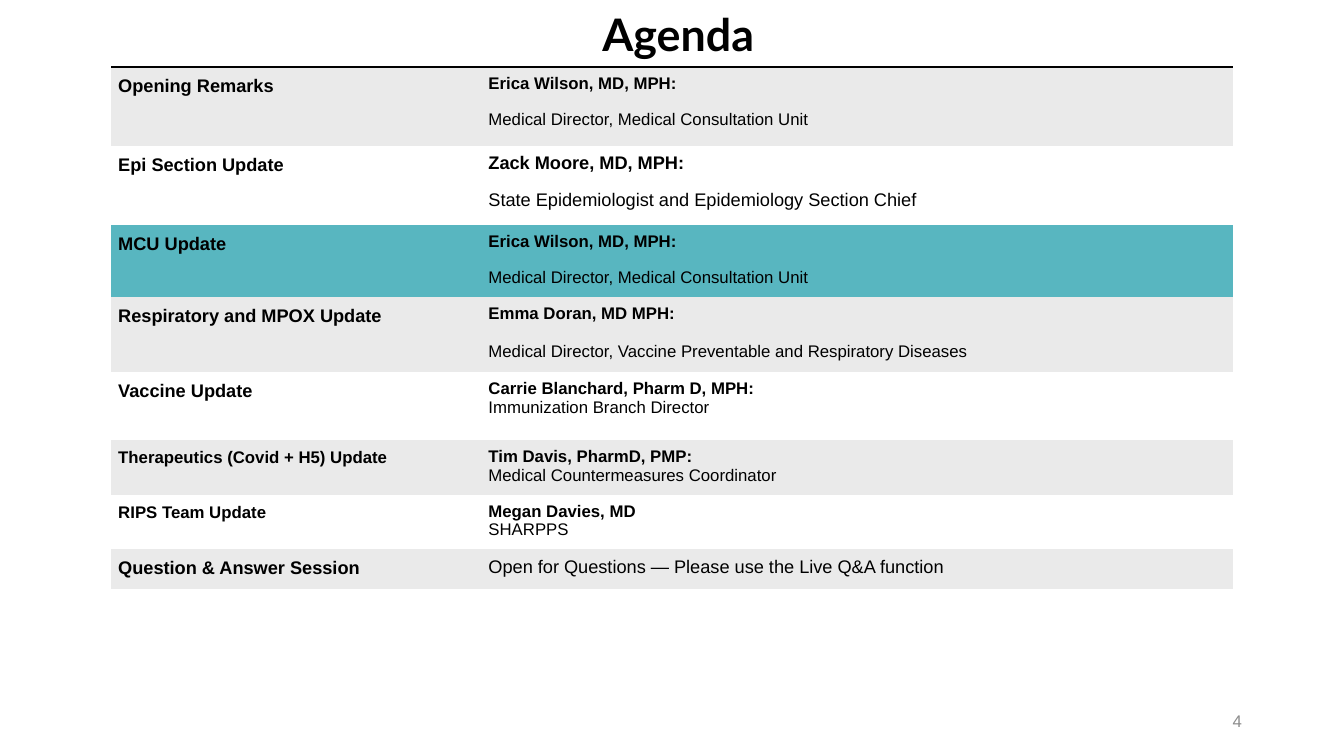
from lxml import etree
from pptx import Presentation
from pptx.dml.color import RGBColor
from pptx.enum import text
from pptx.oxml import ns
from pptx.util import Cm, Pt

BLACK = RGBColor(0x00, 0x00, 0x00)
GREY = RGBColor(0x8C, 0x8C, 0x8C)
BAND = RGBColor(0xEA, 0xEA, 0xEA)
CURRENT = RGBColor(0x58, 0xB6, 0xC0)
WHITE = RGBColor(0xFF, 0xFF, 0xFF)

PLAIN_TABLE_STYLE = "{2D5ABB26-0587-4C30-8999-92F81FD0307C}"
TOPIC_SHARE = 0.33  # part of the table width taken by the topics
CELL_MARGIN = Cm(0.18)

# Height (cm), fill, topic, topic size, speaker, role, speaker size, gap (pt)
AGENDA = [
    (1.99, BAND, "Opening Remarks", 13, "Erica Wilson, MD, MPH:",
     "Medical Director, Medical Consultation Unit", 12, 12),
    (1.99, WHITE, "Epi Section Update", 13, "Zack Moore, MD, MPH:",
     "State Epidemiologist and Epidemiology Section Chief", 13, 12),
    (1.82, CURRENT, "MCU Update", 13, "Erica Wilson, MD, MPH:",
     "Medical Director, Medical Consultation Unit", 12, 12),
    (1.89, BAND, "Respiratory and MPOX Update", 13, "Emma Doran, MD MPH:",
     "Medical Director, Vaccine Preventable and Respiratory Diseases", 12, 13.8),
    (1.71, WHITE, "Vaccine Update", 13, "Carrie Blanchard, Pharm D, MPH:",
     "Immunization Branch Director", 12, 0),
    (1.36, BAND, "Therapeutics (Covid + H5) Update", 12, "Tim Davis, PharmD, PMP:",
     "Medical Countermeasures Coordinator", 12, 0),
    (1.36, WHITE, "RIPS Team Update", 12, "Megan Davies, MD", "SHARPPS", 12, 0),
    (1.01, BAND, "Question & Answer Session", 13, None,
     "Open for Questions — Please use the Live Q&A function", 13, 0),
]


def add_run(paragraph, words, size, bold=False, color=BLACK, font="Arial"):
    run = paragraph.add_run()
    run.text = words
    run.font.name = font
    run.font.size = Pt(size)
    run.font.bold = bold
    run.font.color.rgb = color


def add_title(slide, left, top, width, height):
    frame = slide.shapes.add_textbox(left, top, width, height).text_frame
    frame.word_wrap = False
    frame.paragraphs[0].alignment = text.PP_ALIGN.CENTER
    add_run(frame.paragraphs[0], "Agenda", 32, True, font="Lato")


def add_page_number(slide, left, top, width, height):
    frame = slide.shapes.add_textbox(left, top, width, height).text_frame
    frame.word_wrap = True
    frame.vertical_anchor = text.MSO_ANCHOR.MIDDLE
    frame.paragraphs[0].alignment = text.PP_ALIGN.RIGHT
    add_run(frame.paragraphs[0], "4", 12, color=GREY)


def add_top_rule(cell):
    rule = etree.Element(ns.qn("a:lnT"), w=str(Pt(2.25)))
    fill = etree.SubElement(rule, ns.qn("a:solidFill"))
    etree.SubElement(fill, ns.qn("a:srgbClr"), val=str(BLACK))
    cell._tc.get_or_add_tcPr().insert(0, rule)


def style_cell(cell, fill):
    cell.margin_left = cell.margin_right = CELL_MARGIN
    cell.margin_top = cell.margin_bottom = CELL_MARGIN
    cell.fill.solid()
    cell.fill.fore_color.rgb = fill


def add_agenda(slide, left, top, width):
    height = Cm(sum(item[0] for item in AGENDA))
    table = slide.shapes.add_table(len(AGENDA), 2, left, top, width, height).table
    table.first_row = table.horz_banding = False
    table._tbl.tblPr.find(ns.qn("a:tableStyleId")).text = PLAIN_TABLE_STYLE
    table.columns[0].width = int(width * TOPIC_SHARE)
    table.columns[1].width = width - table.columns[0].width

    for row, item in zip(table.rows, AGENDA):
        row_height, fill, topic, topic_size, speaker, role, size, gap = item
        row.height = Cm(row_height)
        topic_cell, speaker_cell = row.cells
        for cell in row.cells:
            style_cell(cell, fill)

        # Topic
        heading = topic_cell.text_frame.paragraphs[0]
        heading.line_spacing = 1.07
        add_run(heading, topic, topic_size, True)

        # Speaker, then role
        details = speaker_cell.text_frame
        line = details.paragraphs[0]
        if speaker:
            add_run(line, speaker, size, True)
            line = details.add_paragraph()
            line.space_before = Pt(gap)
        add_run(line, role, size)

    for cell in table.rows[0].cells:
        add_top_rule(cell)


def main():
    deck = Presentation()
    deck.slide_width, deck.slide_height = Cm(33.87), Cm(19.05)
    slide = deck.slides.add_slide(deck.slide_layouts[6])
    add_page_number(slide, Cm(23.93), Cm(17.65), Cm(7.62), Cm(1.02))
    add_agenda(slide, Cm(2.8), Cm(1.69), Cm(28.27))
    add_title(slide, Cm(14.91), Cm(0.05), Cm(4.37), Cm(1.63))
    deck.save("out.pptx")


if __name__ == "__main__":
    main()
